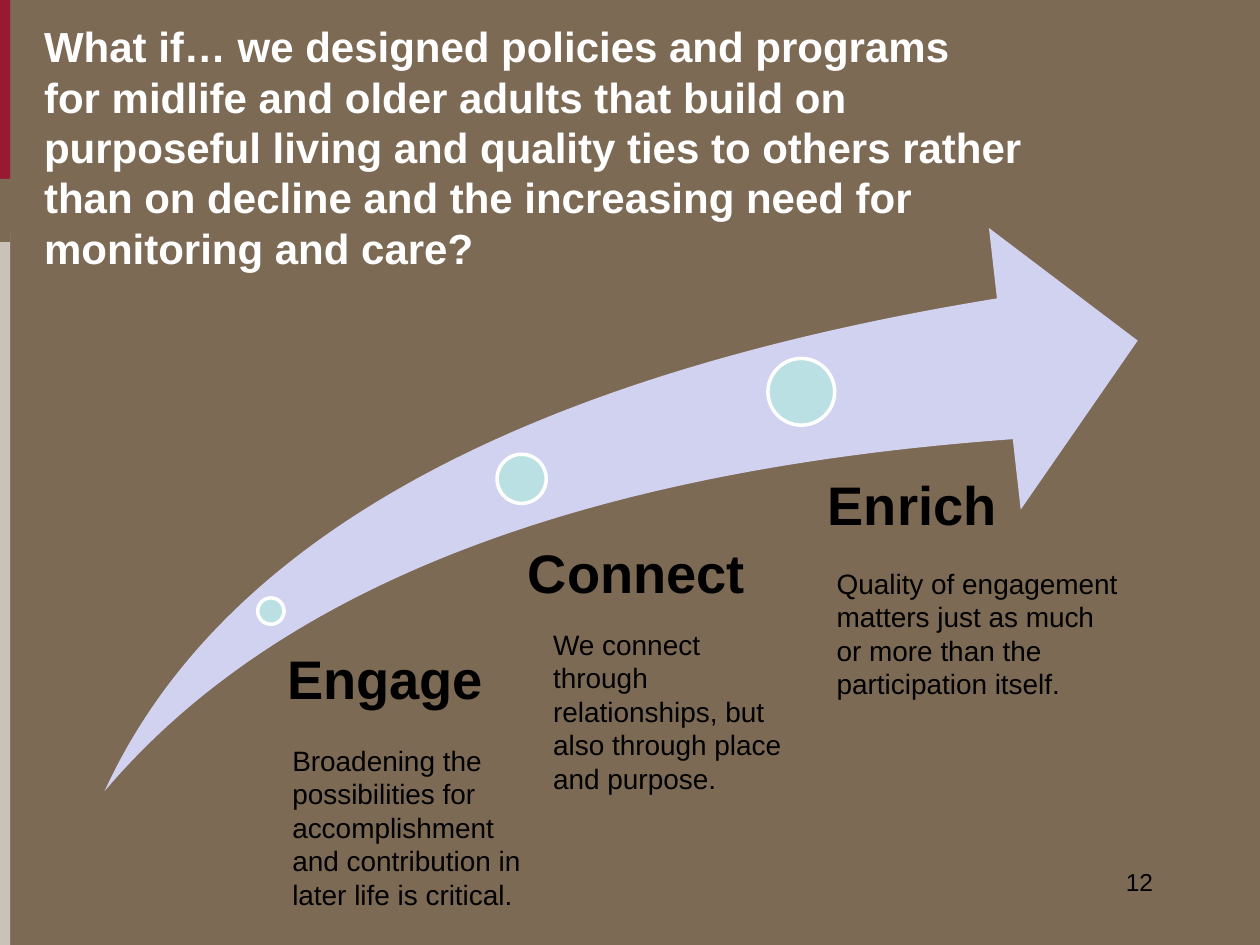
from pptx import Presentation
from pptx.dml.color import RGBColor
from pptx.enum import shapes, text
from pptx.util import Inches, Pt

COLORS = {
    "background": "7D6A55", "accent": "981A31", "sidebar": "CAC2B8",
    "arrow": "D1D1F0", "dot": "BBE0E3", "white": "FFFFFF", "black": "000000",
}
TITLE = (
    "What if… we designed policies and programs \v"
    "for midlife and older adults that build on purposeful living "
    "and quality ties to others rather \v"
    "than on decline and the increasing need for \v"
    "monitoring and care?"
)
SIDEBAR = [("accent", 0, 1.42), ("sidebar", 1.83, 5.67), ("background", 1.42, 0.5)]
STAGES = [
    {
        "name": "Engage", "dot": (2.15, 4.85, 0.21),
        "label": (2.17, 5.18, 1.91, 1.48), "indent": 0.11,
        "caption": "Broadening the possibilities for accomplishment "
                   "and contribution in later life is critical.",
        "caption_box": (1.93, 6.5, 2.73, 0.92),
    },
    {
        "name": "Connect", "dot": (4.14, 3.8, 0.39),
        "label": (3.99, 4.34, 1.97, 0.73), "indent": 0.2,
        "caption": "We connect through relationships, "
                   "but also through place and purpose.",
        "caption_box": (4, 5.92, 2.67, 0.58),
    },
    {
        "name": "Enrich", "dot": (6.36, 3.11, 0.53),
        "label": (6.29, 3.8, 1.97, 1.28), "indent": 0.28,
        "caption": "Quality of engagement matters just as much or more "
                   "than the participation itself.",
        "caption_box": (6.25, 5.29, 3.08, 0.46),
    },
]


def rgb(name):
    return RGBColor.from_string(COLORS[name])


def add_shape(s, kind, box, fill, line=None):
    sp = s.shapes.add_shape(kind, *map(Inches, box))
    sp.shadow.inherit = False
    sp.fill.solid()
    sp.fill.fore_color.rgb = rgb(fill)
    if line:
        sp.line.color.rgb = rgb(line)
        sp.line.width = Pt(2)
    else:
        sp.line.fill.background()
    return sp


def write(sp, content, size, color="black", bold=False, anchor="TOP",
          align="LEFT", insets=(0.1, 0.05, 0.1, 0.05), spacing=None):
    tf = sp.text_frame
    tf.text = content
    tf.word_wrap = True
    tf.auto_size = text.MSO_AUTO_SIZE.NONE
    tf.vertical_anchor = text.MSO_ANCHOR[anchor]
    tf.margin_left, tf.margin_top, tf.margin_right, tf.margin_bottom = map(Inches, insets)
    p = tf.paragraphs[0]
    p.alignment = text.PP_ALIGN[align]
    p.line_spacing = spacing
    for r in p.runs:
        r.font.name = "Arial"
        r.font.size = Pt(size)
        r.font.bold = bold
        r.font.color.rgb = rgb(color)


def add_text(s, box, content, size, **style):
    write(s.shapes.add_textbox(*map(Inches, box)), content, size, **style)


def main():
    """Build the slide with a rising arrow and three stages."""
    prs = Presentation()
    prs.slide_width, prs.slide_height = Inches(10), Inches(7.5)
    s = prs.slides.add_slide(prs.slide_layouts[5])
    s.background.fill.solid()
    s.background.fill.fore_color.rgb = rgb("background")

    title = s.shapes.title
    title.left, title.top, title.width, title.height = map(Inches, (0.25, 0.41, 8.35, 1.51))
    write(title, TITLE, 24, color="white", bold=True, anchor="MIDDLE")

    kinds = shapes.MSO_SHAPE
    for fill, top, height in SIDEBAR:
        add_shape(s, kinds.RECTANGLE, (0, top, 0.08, height), fill)
    add_text(s, (7.17, 6.83, 2.08, 0.5), "12", 14, align="RIGHT")

    arrow = add_shape(s, kinds.SWOOSH_ARROW, (0.83, 1.81, 8.2, 4.47), "arrow")
    arrow.adjustments[0] = arrow.adjustments[1] = 0.25

    for stage in STAGES:
        x, y, size = stage["dot"]
        add_shape(s, kinds.OVAL, (x - size / 2, y - size / 2, size, size), "dot", "white")
        add_text(s, stage["label"], stage["name"], 31, bold=True,
                 insets=(stage["indent"], 0, 0, 0), spacing=0.9)
        add_text(s, stage["caption_box"], stage["caption"], 16, anchor="BOTTOM",
                 insets=(0.39, 0.19, 0.39, 0.19))

    prs.save("out.pptx")


if __name__ == "__main__":
    main()
